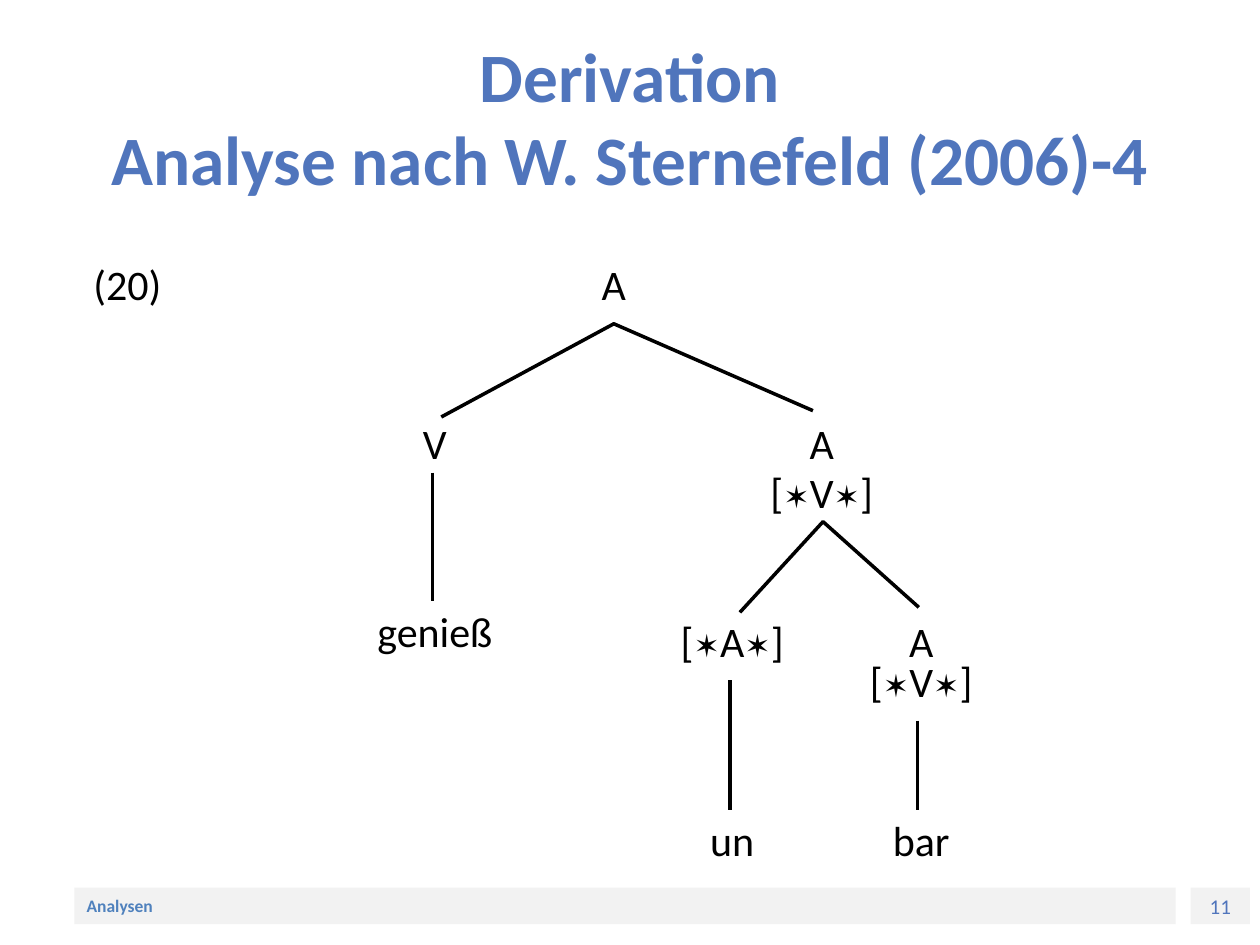
from dataclasses import dataclass
from itertools import groupby

from lxml import etree
from pptx import Presentation
from pptx.dml.color import RGBColor
from pptx.enum.shapes import MSO_CONNECTOR, MSO_SHAPE
from pptx.enum.text import MSO_ANCHOR, PP_ALIGN
from pptx.oxml.ns import qn
from pptx.util import Inches, Pt

CENTER, LEFT = PP_ALIGN.CENTER, PP_ALIGN.LEFT
MIDDLE = MSO_ANCHOR.MIDDLE
RECTANGLE = MSO_SHAPE.RECTANGLE
STRAIGHT = MSO_CONNECTOR.STRAIGHT
TITLE_ONLY = 5
COLUMNS, ROWS = 100, 75
CELL = Inches(0.1)
STAR = "✶"


@dataclass(frozen=True)
class Theme:
    """Colours, font and sizes of the slide."""
    font: str = "Calibri"
    title: RGBColor = RGBColor(0x50, 0x75, 0xBC)
    footer: RGBColor = RGBColor(0x4F, 0x81, 0xBD)
    band: RGBColor = RGBColor(0xF2, 0xF2, 0xF2)
    ink: RGBColor = RGBColor(0, 0, 0)
    title_size: float = 39.6
    node_size: float = 24
    star_size: float = 18
    number_size: float = 12
    footer_size: float = 10
    line_width: float = 2


@dataclass(frozen=True)
class Box:
    """A region measured in grid cells."""
    left: float
    top: float
    width: float
    height: float

    def point(self, column, row):
        """Return the slide position of a cell inside the region."""
        return round((self.left + column) * CELL), round((self.top + row) * CELL)

    def inner(self, column, row, width, height):
        """Return a region placed relative to this one."""
        return Box(self.left + column, self.top + row, width, height)

    def frame(self):
        """Return left, top, width and height as slide lengths."""
        return [round(side * CELL) for side in (self.left, self.top, self.width, self.height)]


THEME = Theme()
NODE_WIDTH, NODE_HEIGHT = 10, 4.7
NODES = [
    ("(20)", 0, 0),
    ("A", 38.6, 0),
    ("V", 24.4, 12.6),
    ("genieß", 24.4, 27.5),
    ("A", 55.1, 12.6),
    ("[✶V✶]", 55.1, 16.5),
    ("[✶A✶]", 48, 28.3),
    ("un", 48, 44.1),
    ("A", 63, 28.3),
    ("[✶V✶]", 63, 31.5),
    ("bar", 63, 44.1),
]
BRANCHES = [
    [(29.9, 12.9), (43.6, 5.5), (59.4, 12.4)],
    [(53.6, 28.4), (60.2, 21.2), (67.8, 28)],
]
STEMS = [(29.2, 17.3, 27.5), (52.8, 33.8, 44.1), (67.7, 37, 44.1)]


def format_run(run, size, color, bold=False):
    """Set the font of one run."""
    run.font.name = THEME.font
    run.font.size = Pt(size)
    run.font.color.rgb = color
    run.font.bold = bold


def add_title(slide, box, text):
    """Fill the title placeholder."""
    title = slide.shapes.title
    title.left, title.top, title.width, title.height = box.frame()
    frame = title.text_frame
    frame.text = text
    frame.vertical_anchor = MIDDLE
    paragraph = frame.paragraphs[0]
    paragraph.alignment = CENTER
    for run in paragraph.runs:
        format_run(run, THEME.title_size, THEME.title, True)


def add_band(slide, box, text, alignment, size, color, bold):
    """Draw one labelled band of the footer."""
    shape = slide.shapes.add_shape(RECTANGLE, *box.frame())
    shape.shadow.inherit = False
    shape.fill.solid()
    shape.fill.fore_color.rgb = THEME.band
    shape.line.fill.background()
    frame = shape.text_frame
    frame.text = text
    frame.vertical_anchor = MIDDLE
    frame.margin_top = frame.margin_bottom = 0
    paragraph = frame.paragraphs[0]
    paragraph.alignment = alignment
    format_run(paragraph.runs[0], size, color, bold)


def add_footer(slide, box, label, number):
    """Draw the section band and the page number band."""
    add_band(slide, box.inner(0, 0, 87.4, box.height), label, LEFT,
             THEME.footer_size, THEME.footer, True)
    add_band(slide, box.inner(88.6, 0, 4.7, box.height), number, CENTER,
             THEME.number_size, THEME.title, False)


def add_node(slide, box, text):
    """Write one node label with smaller stars."""
    frame = slide.shapes.add_textbox(*box.frame()).text_frame
    frame.word_wrap = False
    frame.margin_left = frame.margin_right = 0
    frame.vertical_anchor = MIDDLE
    paragraph = frame.paragraphs[0]
    paragraph.alignment = CENTER
    for is_star, letters in groupby(text, lambda letter: letter == STAR):
        run = paragraph.add_run()
        run.text = "".join(letters)
        format_run(run, THEME.star_size if is_star else THEME.node_size, THEME.ink)


def style_line(line):
    """Set the stroke of a tree line."""
    line.color.rgb = THEME.ink
    line.width = Pt(THEME.line_width)


def add_branch(slide, box, points):
    """Draw a fork through three points."""
    start, *others = [box.point(*point) for point in points]
    builder = slide.shapes.build_freeform(*start)
    builder.add_line_segments(others, close=False)
    shape = builder.convert_to_shape()
    shape.shadow.inherit = False
    shape.fill.background()
    style_line(shape.line)


def add_stem(slide, box, column, top, bottom):
    """Draw a vertical line between a node and its word."""
    connector = slide.shapes.add_connector(
        STRAIGHT, *box.point(column, top), *box.point(column, bottom))
    style_line(connector.line)
    etree.SubElement(connector._element.spPr, qn("a:effectLst"))


def add_tree(slide, box):
    """Draw the derivation tree with its example number."""
    for text, column, row in NODES:
        add_node(slide, box.inner(column, row, NODE_WIDTH, NODE_HEIGHT), text)
    for stem in STEMS:
        add_stem(slide, box, *stem)
    for points in BRANCHES:
        add_branch(slide, box, points)


def main():
    """Build and save the slide."""
    presentation = Presentation()
    presentation.slide_width = COLUMNS * CELL
    presentation.slide_height = ROWS * CELL
    slide = presentation.slides.add_slide(presentation.slide_layouts[TITLE_ONLY])
    add_footer(slide, Box(5.9, 70.45, 93.3, 2.9), "Analysen", "11")
    add_title(slide, Box(5, 3, 90, 12.5), "Derivation\vAnalyse nach W. Sternefeld (2006)-4")
    add_tree(slide, Box(5.12, 20.2, 73, 48.8))
    presentation.save("out.pptx")


if __name__ == "__main__":
    main()
